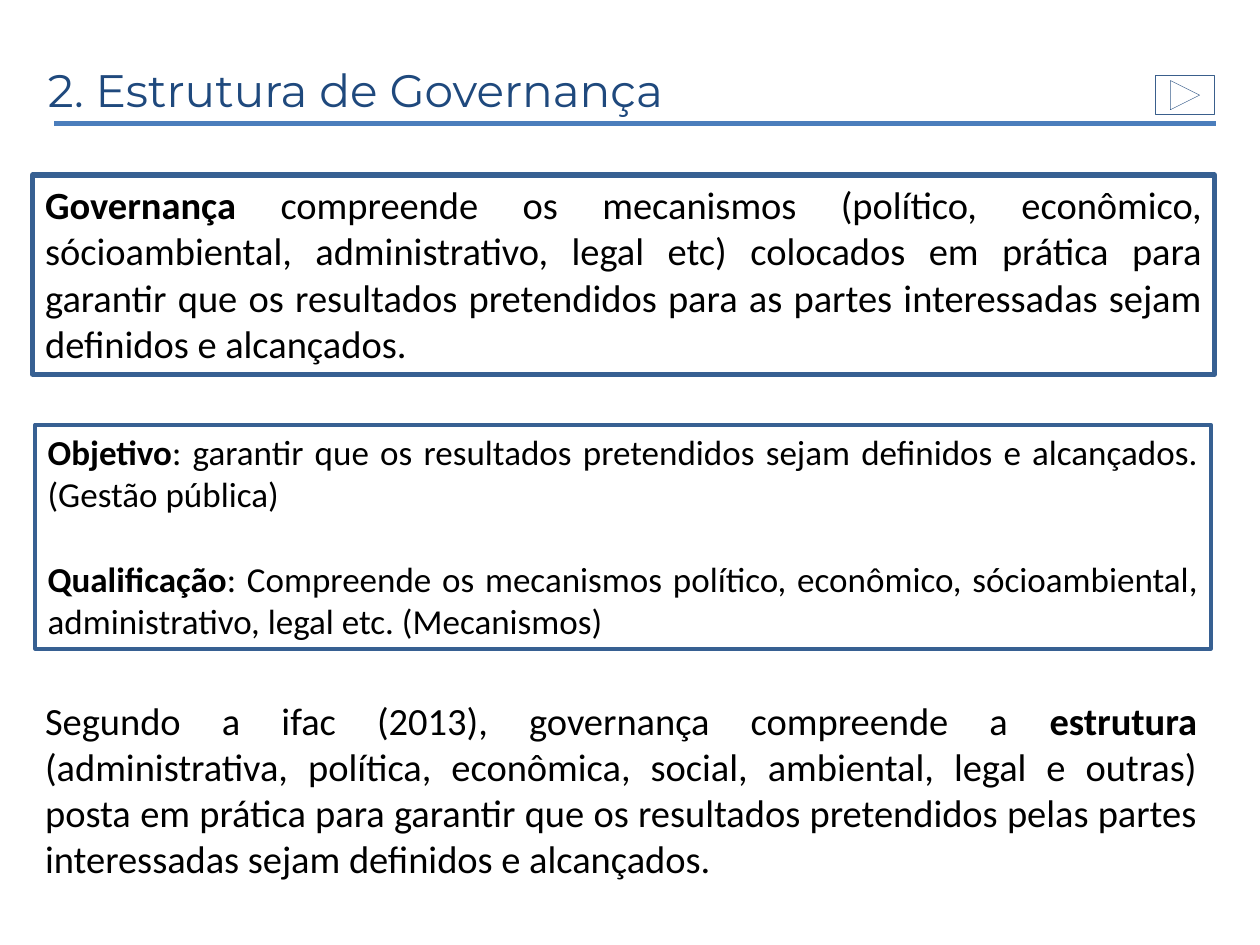
from dataclasses import dataclass

from lxml import etree
from pptx import Presentation
from pptx.dml.color import RGBColor
from pptx.enum.shapes import MSO_CONNECTOR, MSO_SHAPE
from pptx.enum.text import MSO_ANCHOR, MSO_AUTO_SIZE, PP_ALIGN
from pptx.oxml.ns import qn
from pptx.shapes.autoshape import Shape
from pptx.slide import Slide
from pptx.util import Inches, Pt

RECT = MSO_SHAPE.RECTANGLE
NEXT = MSO_SHAPE.ACTION_BUTTON_FORWARD_OR_NEXT
STRAIGHT = MSO_CONNECTOR.STRAIGHT
TOP = MSO_ANCHOR.TOP
FIXED = MSO_AUTO_SIZE.NONE
LEFT, JUSTIFY = PP_ALIGN.LEFT, PP_ALIGN.JUSTIFY

NAVY = RGBColor(0x1F, 0x49, 0x7D)
RULE = RGBColor(0x4B, 0x7E, 0xBC)
FRAME = RGBColor(0x37, 0x60, 0x92)
BUTTON = RGBColor(0x3A, 0x5F, 0x8C)
BLACK = RGBColor(0, 0, 0)

WIDE, HIGH = Inches(10), Inches(7.5)
LINE_RATIO = 1.22  # height of a Calibri line over its font size


@dataclass(frozen=True)
class Area:
    """Left, top, width and height in percent of the slide."""
    x: float
    y: float
    w: float
    h: float

    def box(self) -> tuple[int, int, int, int]:
        return (int(WIDE * self.x / 100), int(HIGH * self.y / 100),
                int(WIDE * self.w / 100), int(HIGH * self.h / 100))


@dataclass(frozen=True)
class Run:
    text: str
    bold: bool = False


@dataclass(frozen=True)
class Panel:
    area: Area
    size: int
    paras: list[list[Run]]
    border: float = 0


PANELS = [
    Panel(Area(2.6, 73.07, 93.4, 21.07), 22, [[
        Run("Segundo a ifac (2013), governança compreende a "),
        Run("estrutura", True),
        Run(" (administrativa, política, econômica, social, ambiental, legal e "
            "outras) posta em prática para garantir que os resultados "
            "pretendidos pelas partes interessadas sejam definidos e "
            "alcançados."),
    ]]),
    Panel(Area(2.6, 18.53, 93.8, 21.07), 22, [[
        Run("Governança", True),
        Run(" compreende os mecanismos (político, econômico, sócioambiental, "
            "administrativo, legal etc) colocados em prática para garantir que "
            "os resultados pretendidos para as partes interessadas sejam "
            "definidos e alcançados."),
    ]], 3),
    Panel(Area(2.8, 44.93, 93.3, 23.73), 20, [
        [Run("Objetivo", True),
         Run(": garantir que os resultados pretendidos sejam definidos e "
             "alcançados. (Gestão pública)")],
        [Run("Qualificação", True),
         Run(": Compreende os mecanismos político, econômico, sócioambiental, "
             "administrativo, legal etc. (Mecanismos)")],
    ], 2.25),
]


def add_title(slide: Slide, area: Area, text: str) -> None:
    title = slide.shapes.title
    title.left, title.top, title.width, title.height = area.box()
    frame = title.text_frame
    frame.text = text
    frame.auto_size = FIXED
    frame.vertical_anchor = TOP
    para = frame.paragraphs[0]
    para.alignment = LEFT
    font = para.runs[0].font
    font.name, font.size, font.color.rgb = "Montserrat", Pt(26), NAVY


def add_rule(slide: Slide, area: Area) -> None:
    x, y, w, h = area.box()
    rule = slide.shapes.add_connector(STRAIGHT, x, y, x + w, y + h)
    rule.line.color.rgb = RULE
    rule.line.width = Pt(3)
    etree.SubElement(rule.element.spPr, qn("a:effectLst"))


def add_outline(slide: Slide, kind: MSO_SHAPE, area: Area,
                color: RGBColor, width: float) -> Shape:
    shape = slide.shapes.add_shape(kind, *area.box())
    shape.shadow.inherit = False
    shape.fill.background()
    shape.line.color.rgb = color
    shape.line.width = Pt(width)
    return shape


def add_panel(slide: Slide, panel: Panel) -> None:
    if panel.border:
        shape = add_outline(slide, RECT, panel.area, FRAME, panel.border)
    else:
        shape = slide.shapes.add_textbox(*panel.area.box())
    frame = shape.text_frame
    frame.word_wrap = True
    frame.vertical_anchor = TOP
    for i, runs in enumerate(panel.paras):
        para = frame.add_paragraph() if i else frame.paragraphs[0]
        para.alignment = JUSTIFY
        if i:
            para.space_before = Pt(panel.size * LINE_RATIO)
        for part in runs:
            run = para.add_run()
            run.text = part.text
            font = run.font
            font.name, font.size, font.bold = "Calibri", Pt(panel.size), part.bold
            font.color.rgb = BLACK


def main() -> None:
    deck = Presentation()
    deck.slide_width, deck.slide_height = WIDE, HIGH
    slide = deck.slides.add_slide(deck.slide_layouts.get_by_name("Title Only"))
    add_title(slide, Area(2.8, 5.87, 80.1, 7.2), "2. Estrutura de Governança")
    add_rule(slide, Area(4.3, 13.07, 92.2, 0))
    for panel in PANELS:
        add_panel(slide, panel)
    add_outline(slide, NEXT, Area(91.7, 8, 4.7, 4.13), BUTTON, 0.25)
    deck.save("out.pptx")


if __name__ == "__main__":
    main()
